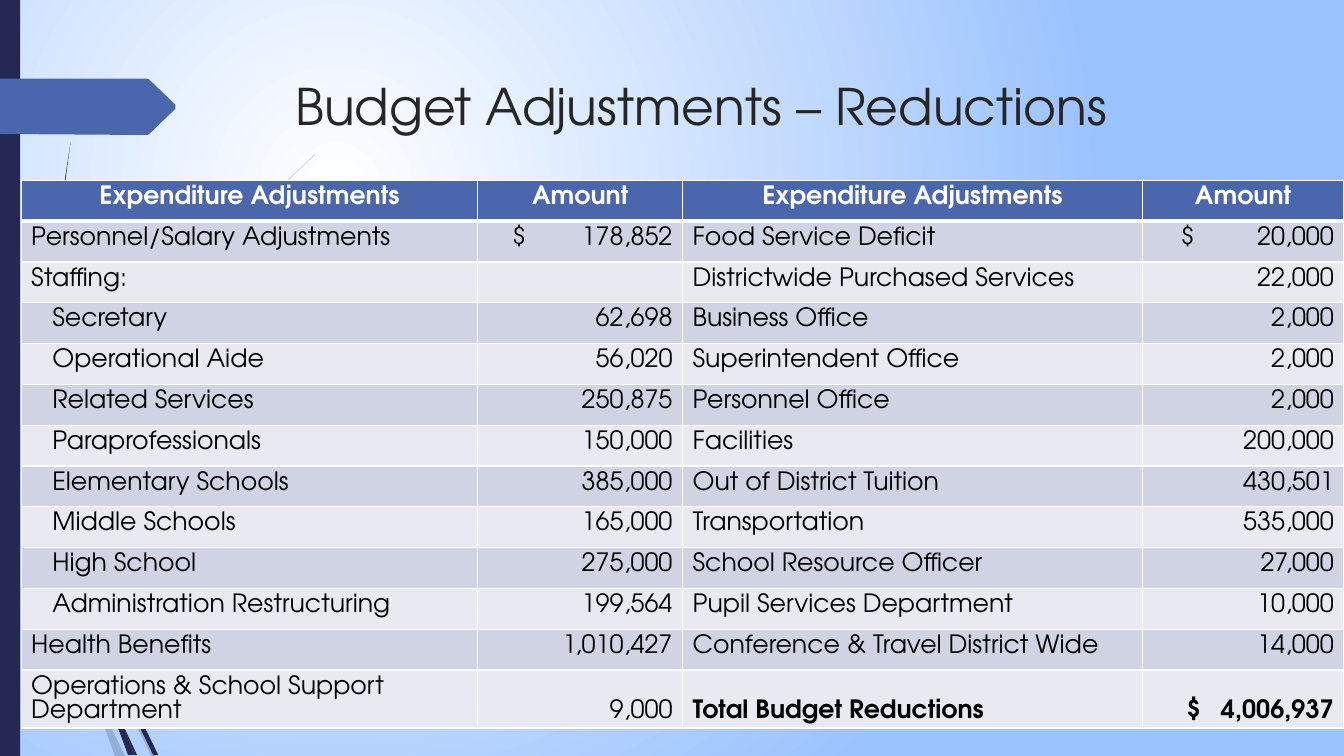
from dataclasses import dataclass

from pptx import Presentation
from pptx.dml.color import RGBColor
from pptx.enum.shapes import MSO_SHAPE
from pptx.enum.text import MSO_ANCHOR, PP_ALIGN
from pptx.oxml import parse_xml
from pptx.oxml.ns import nsdecls, qn
from pptx.oxml.xmlchemy import OxmlElement
from pptx.util import Inches, Pt

W, H = 13.33, 7.5


@dataclass(frozen=True)
class Theme:
    font: str = "TeX Gyre Adventor"
    title_size: int = 36
    cell_size: int = 18
    cell_leading: float = 17.1
    navy: str = "242852"
    blue: str = "4A66AC"
    sky: str = "9BC3FE"
    white: str = "FFFFFF"
    title_ink: str = "262626"
    ink: str = "000000"
    bands: tuple = ("D0D3E3", "E9EAF1")


T = Theme()

# Strand outlines in inches: the light ones are translucent
LIGHT_STRANDS = [
    [(0.92, 6.07), (0.88, 5.96), (0.88, 6.1), (1.23, 6.94), (1.5, 7.5), (1.55, 7.5), (1.27, 6.92)],
    [(1.19, 7.5), (1.24, 7.5), (1.05, 7.11)],
    [(0.88, 5.84), (1.1, 4.62), (1.6, 3.49), (2.29, 2.45), (2.68, 1.98), (2.9, 1.75), (3.12, 1.54),
     (3.12, 1.53), (2.89, 1.75), (2.68, 1.97), (2.28, 2.44), (1.58, 3.48), (1.07, 4.61),
     (0.85, 5.84), (0.88, 5.96)],
    [(1.01, 7.14), (1.14, 7.5), (1.19, 7.5)],
    [(0.96, 6.92), (0.93, 6.83), (0.99, 7.07), (1.01, 7.14), (1.19, 7.5), (1.05, 7.11)],
]
DARK_STRANDS = [
    [(1.13, 6.49), (1.1, 6.41), (1.11, 6.56), (1.32, 7.08), (1.52, 7.49), (1.57, 7.49), (1.36, 7.06)],
    [(0.6, 4.72), (0.58, 4.53), (0.54, 3.49), (0.58, 2.45), (0.63, 1.93), (0.7, 1.41),
     (0.62, 1.93), (0.56, 2.45), (0.52, 3.49), (0.55, 4.49)],
    [(1.33, 7.49), (1.36, 7.49), (1.22, 7.19)],
    [(1.17, 7.22), (1.27, 7.49), (1.31, 7.49)],
    [(1.16, 7.06), (1.1, 6.91), (1.17, 7.22), (1.3, 7.49), (1.33, 7.49), (1.22, 7.19)],
]

HEADER = ("Expenditure Adjustments", "Amount") * 2
ROWS = [
    ("Personnel/Salary Adjustments", "$178,852", "Food Service Deficit", "$20,000"),
    ("Staffing:", "", "Districtwide Purchased Services", "22,000"),
    ("Secretary", "62,698", "Business Office", "2,000"),
    ("Operational Aide", "56,020", "Superintendent Office", "2,000"),
    ("Related Services", "250,875", "Personnel Office", "2,000"),
    ("Paraprofessionals", "150,000", "Facilities", "200,000"),
    ("Elementary Schools", "385,000", "Out of District Tuition", "430,501"),
    ("Middle Schools", "165,000", "Transportation", "535,000"),
    ("High School", "275,000", "School Resource Officer", "27,000"),
    ("Administration Restructuring", "199,564", "Pupil Services Department", "10,000"),
    ("Health Benefits", "1,010,427", "Conference & Travel District Wide", "14,000"),
    ("Operations & School Support Department", "9,000", "Total Budget Reductions", "$4,006,937"),
]
STAFFING_ROWS = range(3, 11)
COLS = (4.53, 2.03, 4.56, 2)
LAST = len(ROWS)


def rgb(color):
    return RGBColor.from_string(color)


def format_font(font, **values):
    for name, value in {"name": T.font, **values}.items():
        if name == "color":
            font.color.rgb = rgb(value)
        else:
            setattr(font, name, value)


def paint(sp, color):
    sp.shadow.inherit = False
    sp.fill.solid()
    sp.fill.fore_color.rgb = rgb(color)
    sp.line.fill.background()


def outline(slide, points, color, alpha=None):
    start, *others = [(Inches(px), Inches(py)) for px, py in points]
    fb = slide.shapes.build_freeform(*start)
    fb.add_line_segments(others, close=True)
    sp = fb.convert_to_shape()
    paint(sp, color)
    if alpha:
        clr = sp._element.spPr.find(".//" + qn("a:srgbClr"))
        clr.append(parse_xml(f'<a:alpha {nsdecls("a")} val="{alpha * 1000}"/>'))


def add_background(slide):
    fill = slide.background.fill
    fill.gradient()
    for stop, color in zip(fill.gradient_stops, (T.white, T.sky)):
        stop.color.rgb = rgb(color)
    grad = slide._element.find(".//" + qn("a:gradFill"))
    grad.remove(grad.find(qn("a:lin")))
    grad.find(qn("a:gsLst")).addnext(parse_xml(
        f'<a:path {nsdecls("a")} path="circle">'
        '<a:fillToRect l="50000" t="50000" r="100000" b="100000"/></a:path>'))


def add_decoration(slide, x, y, w, h):
    for points in LIGHT_STRANDS:
        outline(slide, points, T.navy, 20)
    for points in DARK_STRANDS:
        outline(slide, points, T.navy)
    # Side bar
    bar = slide.shapes.add_shape(MSO_SHAPE.RECTANGLE, *map(Inches, (x, y, 0.2, h)))
    paint(bar, T.navy)
    # Arrow tab, with its point at the right
    top, mid, bottom = y + 0.78, y + 1.06, y + 1.33
    outline(slide, [(x, top), (x + w - 0.28, top), (x + w - 0.26, top + 0.01), (x + w, mid - 0.02),
                    (x + w, mid + 0.02), (x + w - 0.26, bottom), (x + w - 0.28, bottom + 0.01),
                    (x, bottom)], T.blue)


def add_title(slide, x, y, w, h):
    sp = slide.shapes.title
    for name, value in {"left": x, "top": y, "width": w, "height": h}.items():
        setattr(sp, name, Inches(value))
    tf = sp.text_frame
    tf.word_wrap = True
    tf.vertical_anchor = MSO_ANCHOR.TOP
    p = tf.paragraphs[0]
    p.alignment = PP_ALIGN.LEFT
    r = p.add_run()
    r.text = "Budget Adjustments – Reductions"
    format_font(r.font, size=Pt(T.title_size), color=T.title_ink)


def set_borders(cell, row):
    tcPr = cell._tc.get_or_add_tcPr()
    widths = {"lnL": 1, "lnR": 1, "lnT": 3 if row == 1 else 1, "lnB": 3 if row == 0 else 1}
    for tag, width in widths.items():
        tcPr.append(parse_xml(
            f'<a:{tag} {nsdecls("a")} w="{Pt(width)}"><a:solidFill>'
            f'<a:srgbClr val="{T.white}"/></a:solidFill></a:{tag}>'))


def add_tabs(p, dollar, amount):
    tabs = OxmlElement("a:tabLst")
    for pos, align in ((dollar, "l"), (amount, "r")):
        tab = OxmlElement("a:tab")
        tab.set("pos", str(Inches(pos)))
        tab.set("algn", align)
        tabs.append(tab)
    p._p.get_or_add_pPr().append(tabs)


def fill_cell(cell, row, col, text):
    is_head, is_amount = row == 0, col % 2 == 1
    set_borders(cell, row)
    cell.fill.solid()
    cell.fill.fore_color.rgb = rgb(T.blue if is_head else T.bands[(row - 1) % 2])
    cell.vertical_anchor = MSO_ANCHOR.BOTTOM if row == LAST else MSO_ANCHOR.TOP
    if col == 0 and row in STAFFING_ROWS:
        cell.margin_left = Inches(0.31)
    p = cell.text_frame.paragraphs[0]
    p.line_spacing = Pt(T.cell_leading)
    p.alignment = PP_ALIGN.CENTER if is_head else PP_ALIGN.RIGHT if is_amount else PP_ALIGN.LEFT
    # Dollar sign and amount sit on two tab stops
    if text.startswith("$"):
        p.alignment = PP_ALIGN.LEFT
        add_tabs(p, 0.34 if row == LAST else 0.24 if col == 1 else 0.28, COLS[col] - 0.2)
        text = "\t$\t" + text[1:]
    if text:
        r = p.add_run()
        r.text = text
        format_font(r.font, size=Pt(T.cell_size), bold=is_head or (row == LAST and col > 1),
                    color=T.white if is_head else T.ink)
    else:
        format_font(p.font, size=Pt(T.cell_size))


def add_budget_table(slide, x, y, w, h, last_h=0.57):
    frame = slide.shapes.add_table(LAST + 1, len(COLS), *map(Inches, (x, y, w, h)))
    table = frame.table
    for column, width in zip(table.columns, COLS):
        column.width = Inches(width)
    for i, row in enumerate(table.rows):
        row.height = Inches(last_h if i == LAST else (h - last_h) / LAST)
    for i, values in enumerate([HEADER, *ROWS]):
        for j, text in enumerate(values):
            fill_cell(table.cell(i, j), i, j, text)


def main():
    prs = Presentation()
    prs.slide_width, prs.slide_height = Inches(W), Inches(H)
    slide = prs.slides.add_slide(prs.slide_layouts[5])
    add_background(slide)
    add_decoration(slide, 0, 0, 1.74, H)
    add_title(slide, 2.83, 0.69, 9.75, 1.4)
    add_budget_table(slide, 0.21, 1.79, sum(COLS), 5.43)
    prs.save("out.pptx")


if __name__ == "__main__":
    main()
